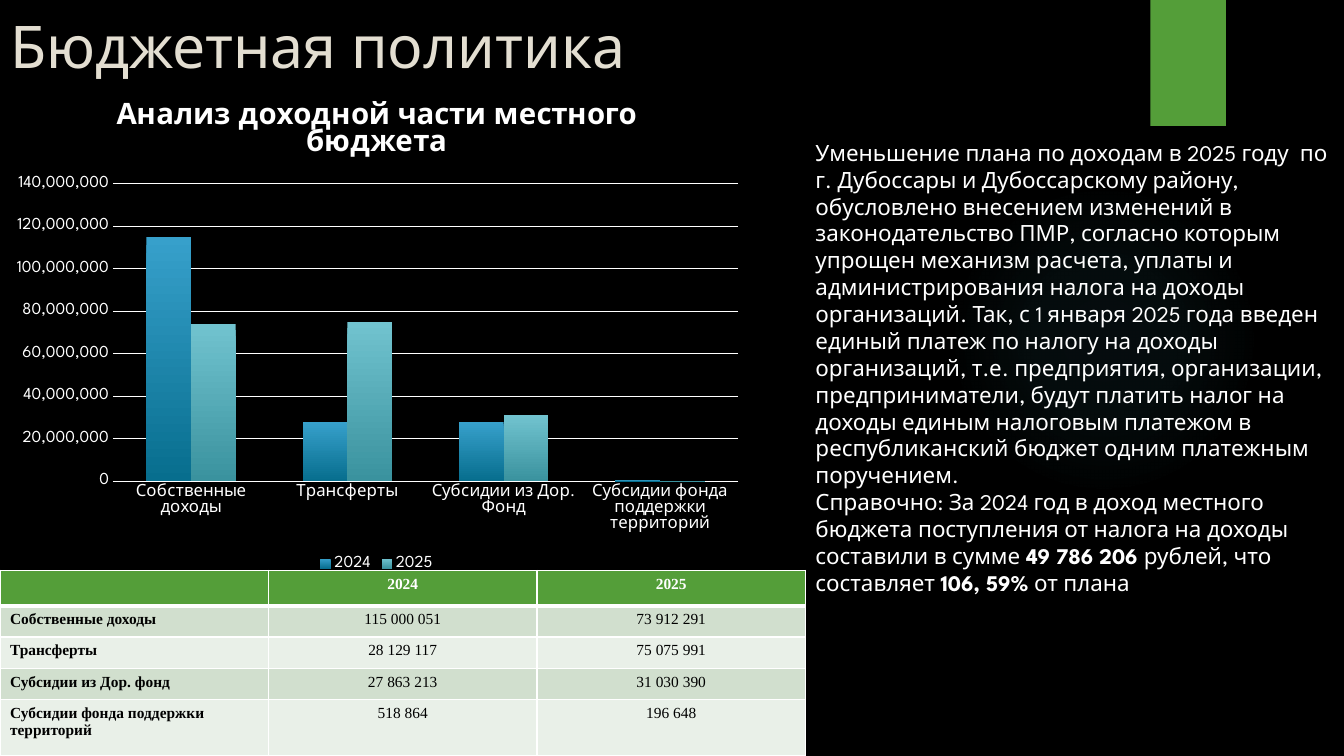
from lxml import etree
from pptx import Presentation
from pptx.chart.data import CategoryChartData
from pptx.dml.color import RGBColor
from pptx.enum.chart import XL_CHART_TYPE, XL_LEGEND_POSITION, XL_TICK_MARK
from pptx.enum.shapes import MSO_SHAPE
from pptx.enum.text import MSO_ANCHOR, MSO_AUTO_SIZE, PP_ALIGN
from pptx.oxml import parse_xml
from pptx.oxml.ns import nsdecls, qn
from pptx.util import Inches, Pt

COLUMNS = XL_CHART_TYPE.COLUMN_CLUSTERED
BOTTOM = XL_LEGEND_POSITION.BOTTOM
NO_TICK = XL_TICK_MARK.NONE
ELLIPSE, RECTANGLE = MSO_SHAPE.OVAL, MSO_SHAPE.RECTANGLE
MIDDLE, NO_FIT = MSO_ANCHOR.MIDDLE, MSO_AUTO_SIZE.NONE
LEFT, CENTER = PP_ALIGN.LEFT, PP_ALIGN.CENTER

SANS, SERIF = "League Spartan", "Times New Roman"
BLACK, WHITE, GREEN, CREAM, TEAL = "000000", "FFFFFF", "549E39", "E3DED1", "4AB5C4"
ROW_FILLS = ("D1DFCE", "E9F0E8")
YEARS = ("2024", "2025")
INCOME_ROWS = [
    ("Собственные доходы", "115 000 051", "73 912 291"),
    ("Трансферты", "28 129 117", "75 075 991"),
    ("Субсидии из Дор. фонд", "27 863 213", "31 030 390"),
    ("Субсидии фонда поддержки территорий", "518 864", "196 648"),
]
CHART_CATEGORIES = ["Собственные доходы", "Трансферты", "Субсидии из Дор. Фонд",
                    "Субсидии фонда поддержки территорий"]
CHART_SERIES = [  # values in millions, then gradient top and bottom
    ((115, 28, 28, 0.5), ("37A0CB", "076E8E")),
    ((74, 75, 31, 0.2), ("71C3CF", "3A929E")),
]
COMMENTARY = [
    [("Уменьшение плана по доходам в 2025 году  по г. Дубоссары и Дубоссарскому району, "
      "обусловлено внесением изменений в законодательство ПМР, согласно которым упрощен "
      "механизм расчета, уплаты и администрирования налога на доходы организаций. Так, "
      "с 1 января 2025 года введен единый платеж по налогу на доходы организаций, т.е. "
      "предприятия, организации, предприниматели, будут платить налог на доходы единым "
      "налоговым платежом в республиканский бюджет одним платежным поручением.", False)],
    [("Справочно: За 2024 год в доход местного бюджета поступления от налога на доходы "
      "составили в сумме ", False),
     ("49 786 206 ", True), ("рублей, что составляет ", False),
     ("106, 59%", True), (" от плана", False)],
]


def color(value):
    return RGBColor.from_string(value)


def style_font(font, size, tint, name=SANS, bold=False):
    font.size, font.name, font.bold = Pt(size), name, bold
    font.color.rgb = color(tint)


def add_span(para, text, size, tint, name=SANS, bold=False):
    span = para.add_run()
    span.text = text
    style_font(span.font, size, tint, name, bold)


def add_plain_shape(page, kind, left, top, width, height):
    shape = page.shapes.add_shape(kind, Inches(left), Inches(top), Inches(width), Inches(height))
    shape.shadow.inherit = False
    shape.line.fill.background()
    return shape


def add_decor(page):
    # Faint glow, fading out from its centre
    glow = add_plain_shape(page, ELLIPSE, 9.41, 1.83, 3.08, 3.08)
    stops = "".join(
        f'<a:gs pos="{place * 1000}"><a:srgbClr val="{TEAL}">'
        f'<a:alpha val="{alpha * 1000}"/></a:srgbClr></a:gs>'
        for place, alpha in ((0, 7), (36, 6), (69, 0), (100, 0)))
    gradient = parse_xml(
        f'<a:gradFill {nsdecls("a")}><a:gsLst>{stops}</a:gsLst><a:path path="circle">'
        '<a:fillToRect l="50000" t="50000" r="50000" b="50000"/></a:path></a:gradFill>')
    glow._element.spPr.find(qn("a:prstGeom")).addnext(gradient)
    # Green tab at the top edge
    tab = add_plain_shape(page, RECTANGLE, 11.41, 0, 0.75, 1.25)
    tab.fill.solid()
    tab.fill.fore_color.rgb = color(GREEN)


def add_title(page, left, top, width, height):
    box = page.shapes.title
    box.left, box.top, box.width, box.height = map(Inches, (left, top, width, height))
    frame = box.text_frame
    frame.auto_size, frame.vertical_anchor = NO_FIT, MIDDLE
    para = frame.paragraphs[0]
    para.alignment = LEFT
    add_span(para, "Бюджетная политика", 42, CREAM)


def style_cell(cell, fill, bottom_width):
    properties = cell._tc.get_or_add_tcPr()
    for side, width in (("L", 1), ("R", 1), ("T", 1), ("B", bottom_width)):
        properties.append(parse_xml(
            f'<a:ln{side} {nsdecls("a")} w="{Pt(width)}"><a:solidFill>'
            f'<a:srgbClr val="{WHITE}"/></a:solidFill></a:ln{side}>'))
    cell.fill.solid()
    cell.fill.fore_color.rgb = color(fill)


def add_income_table(page, left, top, width, row_heights):
    rows = [("", *YEARS), *INCOME_ROWS]
    table = page.shapes.add_table(len(rows), 3, Inches(left), Inches(top), Inches(width),
                                  Inches(sum(row_heights))).table
    for row_index, (texts, height) in enumerate(zip(rows, row_heights)):
        table.rows[row_index].height = Inches(height)
        header = row_index == 0
        fill = GREEN if header else ROW_FILLS[(row_index - 1) % 2]
        for column_index, text in enumerate(texts):
            cell = table.cell(row_index, column_index)
            style_cell(cell, fill, 3 if header else 1)
            para = cell.text_frame.paragraphs[0]
            para.alignment = CENTER if column_index else LEFT
            if text:
                add_span(para, text, 11, WHITE if header else BLACK, SERIF,
                         header or column_index == 0)
            else:
                etree.SubElement(para._p, qn("a:endParaRPr"), sz="1100")


def place_plot(chart, x, y, w, h):
    plot_area = chart._chartSpace.chart.plotArea
    for layout in plot_area.findall(qn("c:layout")):
        plot_area.remove(layout)
    sizes = "".join(f'<c:{key} val="{value}"/>' for key, value in zip("xywh", (x, y, w, h)))
    plot_area.insert(0, parse_xml(
        f'<c:layout {nsdecls("c")}><c:manualLayout><c:layoutTarget val="inner"/>'
        f'<c:xMode val="edge"/><c:yMode val="edge"/>{sizes}</c:manualLayout></c:layout>'))


def add_income_chart(page, left, top, width, height):
    data = CategoryChartData(number_format="#,##0")
    data.categories = CHART_CATEGORIES
    for year, (millions, _) in zip(YEARS, CHART_SERIES):
        data.add_series(year, [round(value * 1_000_000) for value in millions])
    chart = page.shapes.add_chart(COLUMNS, Inches(left), Inches(top), Inches(width),
                                  Inches(height), data).chart
    style_font(chart.font, 10, WHITE)
    # Heading and legend
    chart.has_title = True
    add_span(chart.chart_title.text_frame.paragraphs[0],
             "Анализ доходной части местного бюджета", 21, WHITE, bold=True)
    chart.chart_title.include_in_layout = False
    chart.has_legend = True
    chart.legend.position = BOTTOM
    chart.legend.include_in_layout = False
    style_font(chart.legend.font, 12, WHITE)
    # Axes
    for axis in (chart.category_axis, chart.value_axis):
        axis.major_tick_mark = axis.minor_tick_mark = NO_TICK
        style_font(axis.tick_labels.font, 12, WHITE)
    category_line = chart.category_axis.format.line
    category_line.width, category_line.color.rgb = Pt(1), color(WHITE)
    values = chart.value_axis
    values.minimum_scale, values.maximum_scale, values.major_unit = 0, 140_000_000, 20_000_000
    values.tick_labels.number_format = "#,##0"
    values.tick_labels.number_format_is_linked = False
    values.format.line.fill.background()
    grid_line = values.major_gridlines.format.line
    grid_line.width, grid_line.color.rgb = Pt(0.75), color(WHITE)
    # Columns
    plot = chart.plots[0]
    plot.gap_width, plot.overlap, plot.vary_by_categories = 150, 0, False
    for series, (_, gradient) in zip(plot.series, CHART_SERIES):
        fill = series.format.fill
        fill.gradient()
        fill.gradient_angle = 270
        for stop, tint in zip(fill.gradient_stops, gradient):
            stop.color.rgb = color(tint)
    place_plot(chart, 0.15, 0.21, 0.83, 0.6)


def add_commentary(page, left, top, width, height):
    frame = page.shapes.add_textbox(Inches(left), Inches(top), Inches(width),
                                    Inches(height)).text_frame
    frame.word_wrap = True
    for index, spans in enumerate(COMMENTARY):
        para = frame.add_paragraph() if index else frame.paragraphs[0]
        for text, bold in spans:
            add_span(para, text, 16, WHITE, bold=bold)


def add_budget_page(deck):
    page = deck.slides.add_slide(deck.slide_layouts[5])
    page.background.fill.solid()
    page.background.fill.fore_color.rgb = color(BLACK)
    add_decor(page)
    add_title(page, 0, 0, 13.33, 0.89)
    add_income_table(page, 0, 5.66, 7.99, (0.35, 0.31, 0.31, 0.31, 0.56))
    add_income_chart(page, 0, 0.79, 7.47, 4.92)
    add_commentary(page, 7.99, 1.33, 5.34, 4.68)


def main():
    deck = Presentation()
    deck.slide_width, deck.slide_height = Inches(13.33), Inches(7.5)
    add_budget_page(deck)
    deck.save("out.pptx")


if __name__ == "__main__":
    main()
